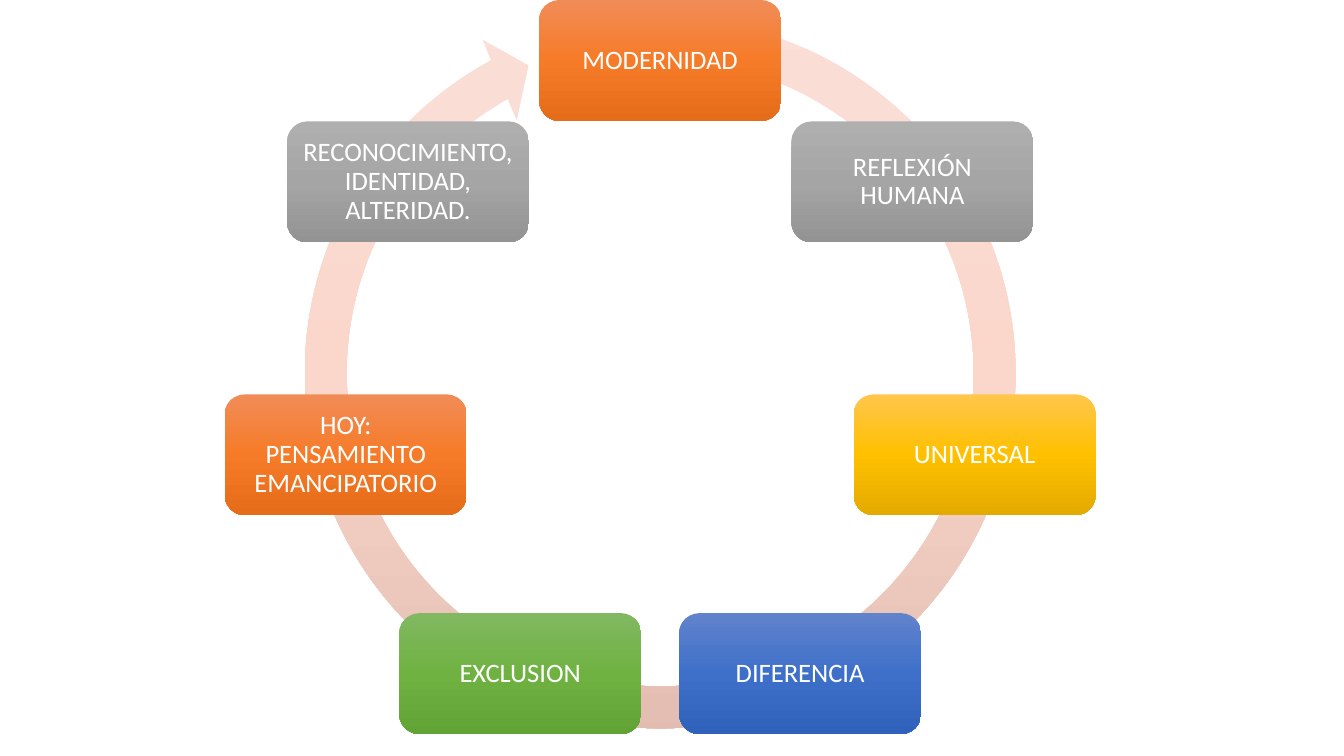
import copy
import math

import pptx
import pptx.dml.color
import pptx.enum.shapes
import pptx.enum.text
import pptx.util

Pt = pptx.util.Pt
RGBColor = pptx.dml.color.RGBColor
Shapes = pptx.enum.shapes.MSO_SHAPE

WHITE = RGBColor(0xFF, 0xFF, 0xFF)
ORANGE = [RGBColor(0xF1, 0x8C, 0x57), RGBColor(0xF6, 0x7B, 0x28), RGBColor(0xE5, 0x6C, 0x19)]
GRAY = [RGBColor(0xAF, 0xAF, 0xAF), RGBColor(0xA5, 0xA5, 0xA5), RGBColor(0x93, 0x93, 0x93)]
GOLD = [RGBColor(0xFF, 0xC6, 0x4B), RGBColor(0xFF, 0xC0, 0x00), RGBColor(0xE3, 0xAB, 0x00)]
BLUE = [RGBColor(0x61, 0x83, 0xCB), RGBColor(0x3E, 0x70, 0xCA), RGBColor(0x30, 0x62, 0xBB)]
GREEN = [RGBColor(0x81, 0xB8, 0x61), RGBColor(0x6F, 0xB2, 0x42), RGBColor(0x62, 0xA3, 0x36)]
PINK = [RGBColor(0xFA, 0xE0, 0xD8), RGBColor(0xFA, 0xD6, 0xCB), RGBColor(0xE2, 0xBC, 0xB1)]

STAGES = [
    ("MODERNIDAD", ORANGE),
    ("REFLEXIÓN HUMANA", GRAY),
    ("UNIVERSAL", GOLD),
    ("DIFERENCIA", BLUE),
    ("EXCLUSION", GREEN),
    ("HOY: PENSAMIENTO EMANCIPATORIO", ORANGE),
    ("RECONOCIMIENTO, IDENTIDAD, ALTERIDAD.", GRAY),
]

CENTER_X, CENTER_Y, RADIUS = 471.6, 273.6, 230.4
BOX_WIDTH, BOX_HEIGHT = 172.8, 86.4
ARROW_SIZE, ARROW_TOP = 540, -3.6
RING_PERCENT, HEAD_PERCENT = 5.54, 5.76
HEAD_ANGLE, END_ANGLE, START_ANGLE = 5.51, 241.29, 282.87
DEGREE = 0.6


def add_gradient_shape(page, kind, left, top, width, height, colors):
    shape = page.shapes.add_shape(kind, Pt(left), Pt(top), Pt(width), Pt(height))
    shape.shadow.inherit = False
    shape.line.fill.background()
    shape.fill.gradient()
    shape.fill.gradient_angle = 270
    stop_list = shape.element.xpath(".//a:gsLst")[0]
    stop_list.insert(1, copy.deepcopy(stop_list[0]))
    for index, (stop, color) in enumerate(zip(shape.fill.gradient_stops, colors)):
        stop.position = index / 2
        stop.color.rgb = color
    return shape


def add_stage(page, index, text, colors):
    angle = 2 * math.pi * index / len(STAGES)
    left = CENTER_X + RADIUS * math.sin(angle) - BOX_WIDTH / 2
    top = CENTER_Y - RADIUS * math.cos(angle) - BOX_HEIGHT / 2
    box = add_gradient_shape(page, Shapes.ROUNDED_RECTANGLE, left, top,
                             BOX_WIDTH, BOX_HEIGHT, colors)
    frame = box.text_frame
    frame.word_wrap = True
    frame.vertical_anchor = pptx.enum.text.MSO_ANCHOR.MIDDLE
    frame.margin_left = frame.margin_right = Pt(5.5)
    frame.margin_top = frame.margin_bottom = Pt(5.5)
    para = frame.paragraphs[0]
    para.text = text
    para.alignment = pptx.enum.text.PP_ALIGN.CENTER
    para.line_spacing = 0.9
    para.font.name = "Calibri"
    para.font.size = Pt(19)
    para.font.color.rgb = WHITE


def main():
    deck = pptx.Presentation()
    deck.slide_width, deck.slide_height = Pt(960), Pt(540)
    page = deck.slides.add_slide(deck.slide_layouts[6])

    arrow = add_gradient_shape(page, Shapes.CIRCULAR_ARROW, CENTER_X - ARROW_SIZE / 2,
                               ARROW_TOP, ARROW_SIZE, ARROW_SIZE, PINK)
    settings = [RING_PERCENT / 100, HEAD_ANGLE * DEGREE, END_ANGLE * DEGREE,
                START_ANGLE * DEGREE, HEAD_PERCENT / 100]
    for index, value in enumerate(settings):
        arrow.adjustments[index] = value

    for index, (text, colors) in enumerate(STAGES):
        add_stage(page, index, text, colors)
    deck.save("out.pptx")


if __name__ == "__main__":
    main()
